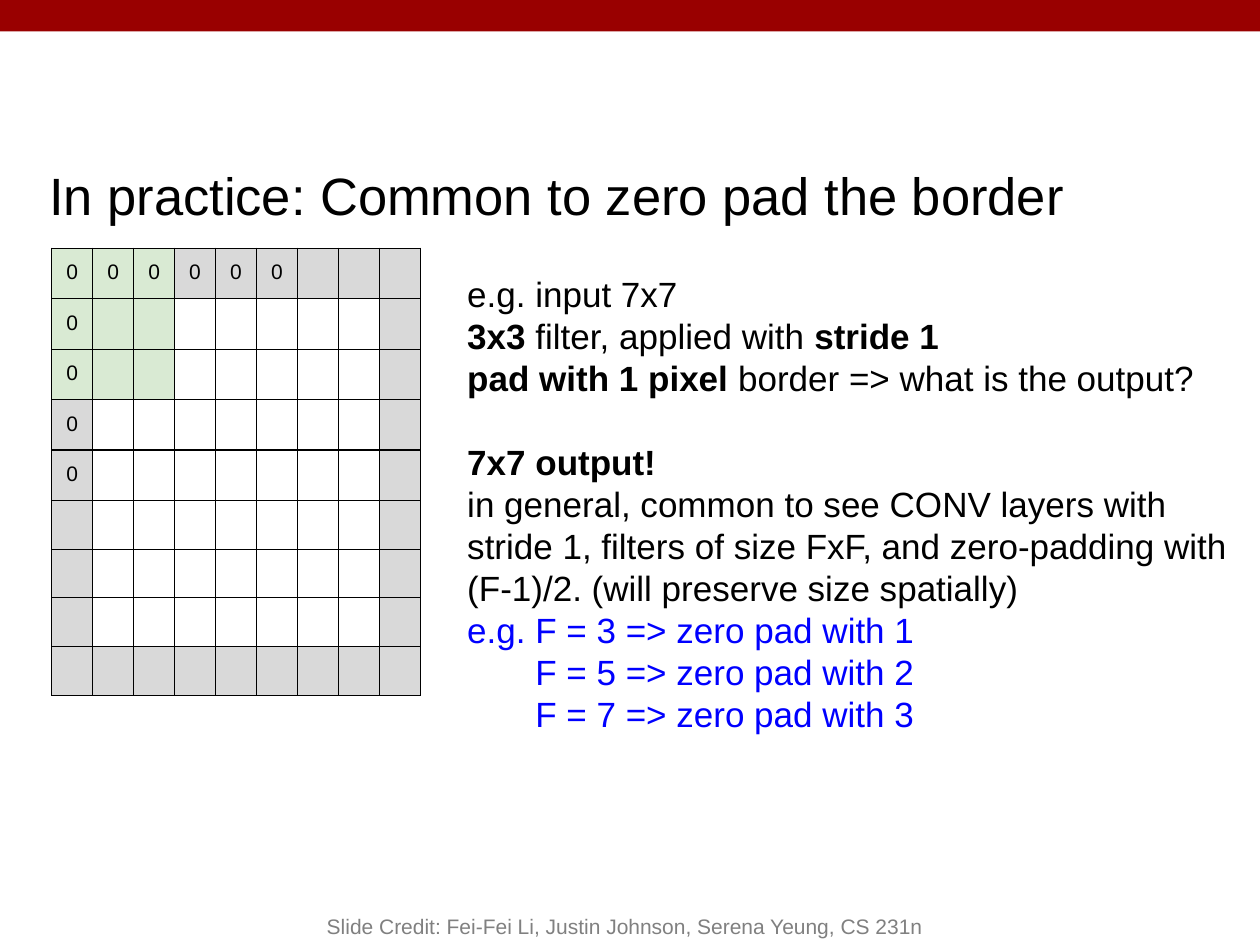
from lxml import etree
from pptx import Presentation
from pptx.dml.color import RGBColor
from pptx.enum import shapes, text
from pptx.oxml import ns
from pptx.util import Inches, Pt

BLACK = RGBColor(0, 0, 0)
BLUE = RGBColor(0, 0, 255)
RED = RGBColor(0x99, 0, 0)
GRAY = RGBColor(0x80, 0x80, 0x80)
PAD = RGBColor(0xD9, 0xD9, 0xD9)
GREEN = RGBColor(0xD9, 0xEA, 0xD3)
WHITE = RGBColor(255, 255, 255)

TITLE = "In practice: Common to zero pad the border"
CREDIT = "Slide Credit: Fei-Fei Li, Justin Johnson, Serena Yeung, CS 231n"
# (runs as (text, bold), colour, left indent, space before)
BODY = [
    ([("e.g. input 7x7", False)], BLACK, 0, 0),
    ([("3x3", True), (" filter, applied with ", False), ("stride 1", True)], BLACK, 0, 0),
    ([("pad with 1 pixel", True), (" border => what is the output?", False)], BLACK, 0, 0),
    ([("7x7 output!", True)], BLACK, 0, 24),
    ([("in general, common to see CONV layers with stride 1, filters of size FxF, "
       "and zero-padding with (F-1)/2. (will preserve size spatially)", False)], BLACK, 0, 0),
    ([("e.g. F = 3 => zero pad with 1", False)], BLUE, 0, 0),
    ([("F = 5 => zero pad with 2", False)], BLUE, 0.54, 0),
    ([("F = 7 => zero pad with 3", False)], BLUE, 0.54, 0),
]
SIZE, FILTER = 9, 3
ZEROS = {(0, col) for col in range(6)} | {(row, 0) for row in range(5)}


def style(para, size, color, align=text.PP_ALIGN.LEFT):
    para.alignment = align
    para.font.name, para.font.size = "Arial", Pt(size)
    para.font.color.rgb = color


def inset(item, side, edge):
    item.margin_left = item.margin_right = Inches(side)
    item.margin_top = item.margin_bottom = Inches(edge)


def place(shape, left, top, width, height):
    shape.left, shape.top = Inches(left), Inches(top)
    shape.width, shape.height = Inches(width), Inches(height)


def border(cell):
    props = cell._tc.get_or_add_tcPr()
    for side in ("lnL", "lnR", "lnT", "lnB"):
        line = etree.SubElement(props, ns.qn("a:" + side), w=str(Pt(0.75)))
        fill = etree.SubElement(line, ns.qn("a:solidFill"))
        etree.SubElement(fill, ns.qn("a:srgbClr"), val=str(BLACK))


def shade(row, col):
    if max(row, col) < FILTER:
        return GREEN
    edge = {0, SIZE - 1}
    return PAD if row in edge or col in edge else WHITE


def add_box(slide, *spot):
    frame = slide.shapes.add_textbox(*map(Inches, spot)).text_frame
    frame.word_wrap = True
    return frame


def add_title(slide):
    title = slide.shapes.title
    place(title, 0.29, 1.17, 9.06, 0.81)
    frame = title.text_frame
    frame.text = TITLE
    frame.auto_size = text.MSO_AUTO_SIZE.NONE
    frame.vertical_anchor = text.MSO_ANCHOR.MIDDLE
    inset(frame, 0.1, 0.1)
    para = frame.paragraphs[0]
    para.line_spacing = 0.9
    style(para, 30, BLACK)


def add_body(slide):
    frame = add_box(slide, 3.61, 2.06, 6.39, 1.62)
    inset(frame, 0.1, 0.1)
    for num, (runs, color, indent, before) in enumerate(BODY):
        para = frame.add_paragraph() if num else frame.paragraphs[0]
        para.line_spacing = Pt(24)
        para.space_before = Pt(before)
        if indent:
            para._p.get_or_add_pPr().set("marL", str(Inches(indent)))
        style(para, 20, color)
        for words, bold in runs:
            run = para.add_run()
            run.text = words
            run.font.bold = bold


def add_grid(slide):
    spot = map(Inches, (0.41, 1.97, 2.93, 3.48))
    grid = slide.shapes.add_table(SIZE, SIZE, *spot).table
    grid.first_row = grid.horz_banding = False
    for row in range(SIZE):
        for col in range(SIZE):
            cell = grid.cell(row, col)
            border(cell)
            cell.fill.solid()
            cell.fill.fore_color.rgb = shade(row, col)
            zero = (row, col) in ZEROS
            inset(cell, 0.1, 0.1 if zero else 0.03)
            if zero:
                cell.text = "0"
            style(cell.text_frame.paragraphs[0], 12, BLACK, text.PP_ALIGN.CENTER)


def add_credit(slide):
    frame = add_box(slide, 2, 7, 5.92, 0.5)
    frame.vertical_anchor = text.MSO_ANCHOR.BOTTOM
    frame.text = CREDIT
    style(frame.paragraphs[0], 12, GRAY, text.PP_ALIGN.CENTER)


def main():
    deck = Presentation()
    deck.slide_width, deck.slide_height = Inches(10), Inches(7.5)
    slide = deck.slides.add_slide(deck.slide_layouts[5])
    bar = slide.shapes.add_shape(shapes.MSO_SHAPE.RECTANGLE, 0, 0, Inches(10), Inches(0.25))
    bar.shadow.inherit = False
    bar.fill.solid()
    bar.fill.fore_color.rgb = RED
    bar.line.fill.background()
    add_title(slide)
    add_body(slide)
    add_grid(slide)
    add_credit(slide)
    deck.save("out.pptx")


if __name__ == "__main__":
    main()
